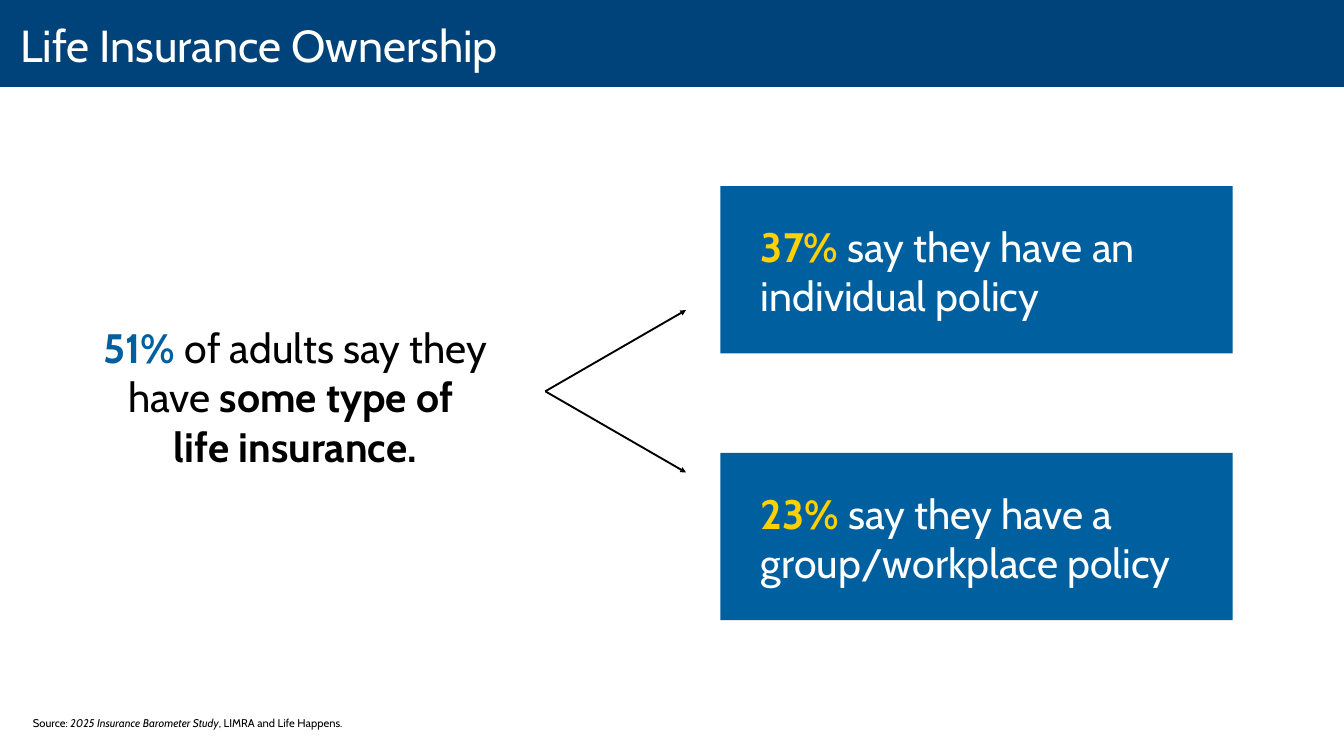
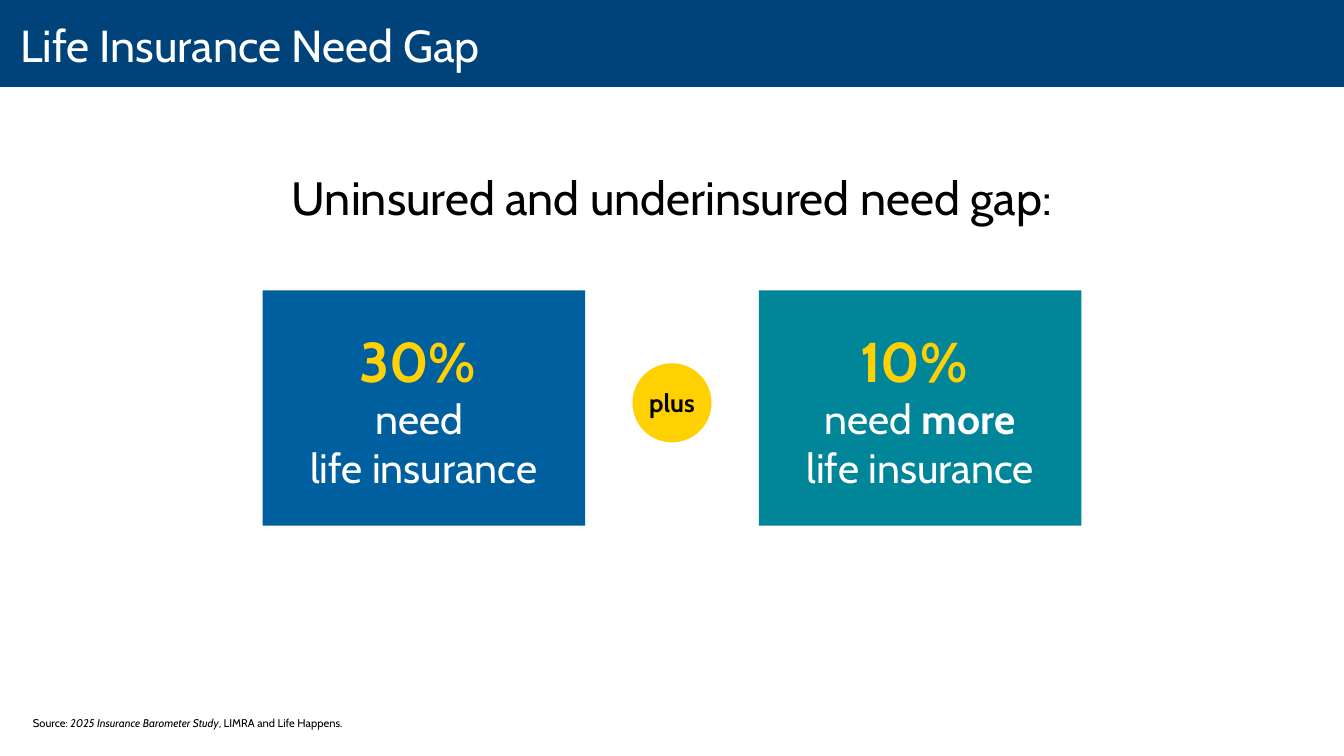
from dataclasses import dataclass

from lxml import etree
from pptx import Presentation
from pptx.dml.color import RGBColor
from pptx.enum.shapes import MSO_CONNECTOR, MSO_SHAPE
from pptx.enum.text import MSO_ANCHOR, MSO_AUTO_SIZE, PP_ALIGN
from pptx.oxml.ns import qn
from pptx.util import Pt

LEFT, CENTER = PP_ALIGN.LEFT, PP_ALIGN.CENTER
TOP, MIDDLE, BOTTOM = MSO_ANCHOR.TOP, MSO_ANCHOR.MIDDLE, MSO_ANCHOR.BOTTOM
RECT, OVAL = MSO_SHAPE.RECTANGLE, MSO_SHAPE.OVAL
STRAIGHT = MSO_CONNECTOR.STRAIGHT
TITLE_ONLY = 5
EMU_PER_PX = 9525
SLIDE_W, SLIDE_H = 1920, 1080


@dataclass(frozen=True)
class Theme:
    font: str = "Cabin"
    navy: str = "00437B"
    blue: str = "005F9E"
    teal: str = "008599"
    yellow: str = "FFD103"
    white: str = "FFFFFF"
    black: str = "000000"
    title: int = 48
    heading: int = 50
    figure: int = 60
    body: int = 44
    badge: int = 27
    source: int = 12
    arrow: int = 2


THEME = Theme()

# A paragraph is (size, runs); a run is (text, colour, style), style "b" or "i".
# A newline inside a run is a line break.
SOURCE = [(THEME.source, [
    ("Source: ", THEME.black, ""),
    ("2025 Insurance Barometer Study", THEME.black, "i"),
    (", LIMRA and Life Happens.", THEME.black, ""),
])]

OWNERSHIP_TITLE = "Life Insurance Ownership"
OWNERS = [(THEME.body, [
    ("51% ", THEME.blue, "b"),
    ("of adults say they have ", THEME.black, ""),
    ("some type of \nlife insurance.", THEME.black, "b"),
])]
POLICIES = [
    ("37% ", "say they have an individual policy"),
    ("23% ", "say they have a group/workplace policy"),
]

GAP_TITLE = "Life Insurance Need Gap"
GAP_HEADING = "Uninsured and underinsured need gap:"
GAP_JOINER = "plus"
NEEDS = [
    (THEME.blue, "30% ", [
        [("need ", THEME.white, "")],
        [("life insurance", THEME.white, "")],
    ]),
    (THEME.teal, "10% ", [
        [("need ", THEME.white, ""), ("more", THEME.white, "b"),
         (" life insurance", THEME.white, "")],
    ]),
]

TEXT_INSETS = (10, 5, 10, 5)
CARD_INSETS = (58, 48, 58, 48)
NO_INSETS = (0, 0, 0, 0)


def px(length):
    return round(length * EMU_PER_PX)


def rgb(colour):
    return RGBColor.from_string(colour)


def write(shape, paragraphs, align=LEFT, anchor=TOP, insets=TEXT_INSETS):
    frame = shape.text_frame
    frame.word_wrap = True
    frame.auto_size = MSO_AUTO_SIZE.NONE
    frame.vertical_anchor = anchor
    (frame.margin_left, frame.margin_top,
     frame.margin_right, frame.margin_bottom) = map(px, insets)
    for index, (size, runs) in enumerate(paragraphs):
        paragraph = frame.add_paragraph() if index else frame.paragraphs[0]
        paragraph.alignment = align
        paragraph.font.name = THEME.font
        paragraph.font.size = Pt(size)
        for text, colour, style in runs:
            for line_no, line in enumerate(text.split("\n")):
                if line_no:
                    paragraph.add_line_break()
                run = paragraph.add_run()
                run.text = line
                run.font.color.rgb = rgb(colour)
                run.font.bold = style == "b"
                run.font.italic = style == "i"


def add_text(slide, box, paragraphs, **layout):
    write(slide.shapes.add_textbox(*map(px, box)), paragraphs, **layout)


def add_block(slide, kind, box, colour):
    block = slide.shapes.add_shape(kind, *map(px, box))
    block.shadow.inherit = False
    block.fill.solid()
    block.fill.fore_color.rgb = rgb(colour)
    block.line.fill.background()
    return block


def add_card(slide, box, colour, paragraphs, align=LEFT):
    write(add_block(slide, RECT, box, colour), paragraphs,
          align, BOTTOM, CARD_INSETS)


def add_arrow(slide, start, end):
    arrow = slide.shapes.add_connector(STRAIGHT, *map(px, start + end))
    arrow.line.color.rgb = rgb(THEME.black)
    arrow.line.width = Pt(THEME.arrow)
    properties = arrow.element.spPr
    etree.SubElement(properties.find(qn("a:ln")), qn("a:tailEnd"),
                     type="triangle")
    etree.SubElement(properties, qn("a:effectLst"))


def add_layout_band(slide):
    """Put the title band on the layout, behind its placeholders."""
    band = add_block(slide, RECT, (0, 0, SLIDE_W, 124), THEME.navy)
    slide.slide_layout.placeholders[0].element.addprevious(band.element)


def add_slide(deck, title_text):
    slide = deck.slides.add_slide(deck.slide_layouts[TITLE_ONLY])
    title = slide.shapes.title
    title.left, title.top, title.width, title.height = map(
        px, (0, -7, SLIDE_W, 140))
    write(title, [(THEME.title, [(title_text, THEME.white, "")])],
          LEFT, MIDDLE, (29, 0, 19, 0))
    add_text(slide, (37, 1019, 1312, 29), SOURCE)
    return slide


def build_ownership(deck):
    slide = add_slide(deck, OWNERSHIP_TITLE)
    add_layout_band(slide)
    add_text(slide, (115, 455, 614, 223), OWNERS, align=CENTER, anchor=MIDDLE)

    card_top, card_pitch = 266, 381
    fork_x, fork_y, reach, spread = 779, 559, 201, 116
    for index, (share, claim) in enumerate(POLICIES):
        add_card(slide, (1029, card_top + index * card_pitch, 732, 239),
                 THEME.blue,
                 [(THEME.body, [(share, THEME.yellow, "b"),
                                (claim, THEME.white, "")])])
        tip_y = fork_y + (2 * index - 1) * spread
        add_arrow(slide, (fork_x, fork_y), (fork_x + reach, tip_y))


def build_need_gap(deck):
    slide = add_slide(deck, GAP_TITLE)
    add_text(slide, (250, 236, 1420, 90),
             [(THEME.heading, [(GAP_HEADING, THEME.black, "")])], align=CENTER)

    card_top, card_w, card_h, gap = 415, 461, 336, 248
    row_left = (SLIDE_W - 2 * card_w - gap) / 2
    for index, (colour, share, lines) in enumerate(NEEDS):
        paragraphs = [(THEME.figure, [(share, THEME.yellow, "b")])]
        paragraphs += [(THEME.body, runs) for runs in lines]
        left = row_left + index * (card_w + gap)
        add_card(slide, (left, card_top, card_w, card_h), colour,
                 paragraphs, CENTER)

    diameter = 113
    badge = add_block(slide, OVAL, ((SLIDE_W - diameter) / 2, 519,
                                    diameter, diameter), THEME.yellow)
    write(badge, [(THEME.badge, [(GAP_JOINER, THEME.black, "b")])],
          CENTER, MIDDLE, NO_INSETS)


def main():
    deck = Presentation()
    deck.slide_width, deck.slide_height = px(SLIDE_W), px(SLIDE_H)
    build_ownership(deck)
    build_need_gap(deck)
    deck.save("out.pptx")


if __name__ == "__main__":
    main()
